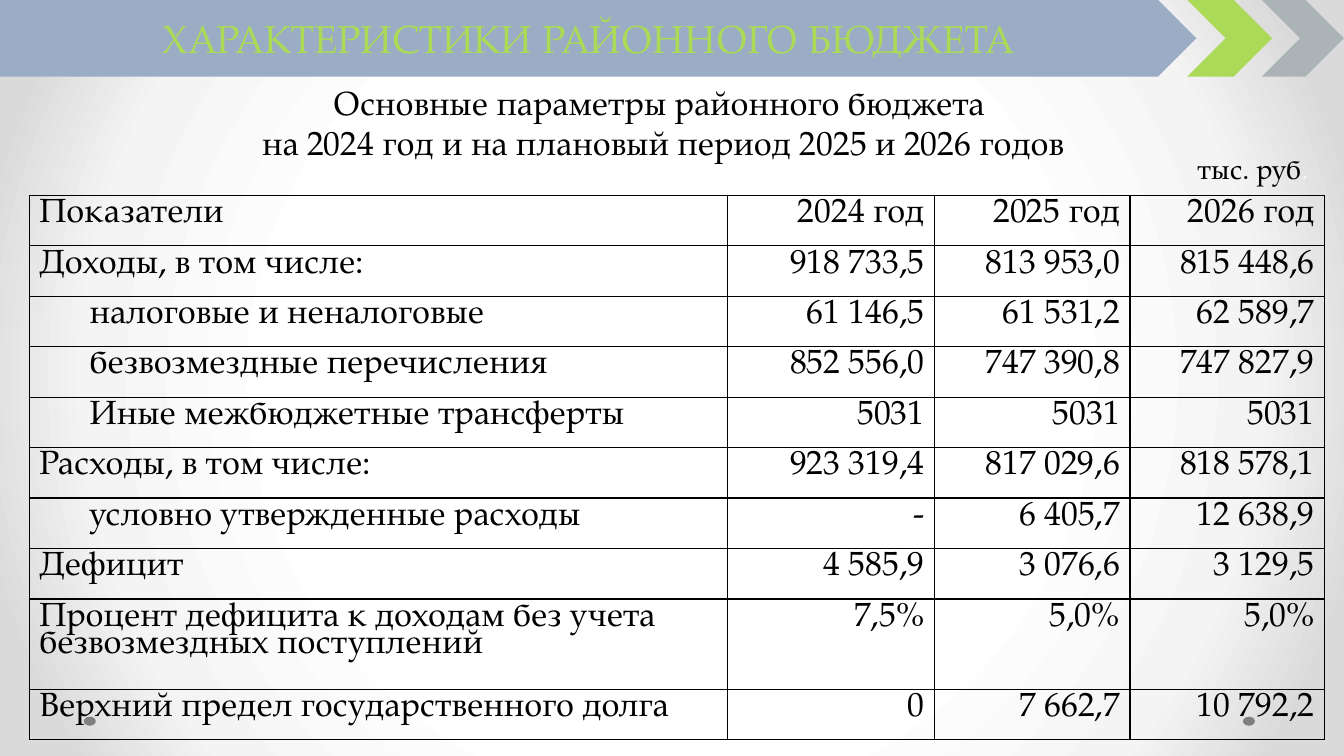
from dataclasses import dataclass

from lxml import etree
from pptx import Presentation
from pptx.dml.color import RGBColor
from pptx.enum import shapes, text
from pptx.oxml import parse_xml
from pptx.oxml.ns import qn
from pptx.util import Pt

TITLE = "ХАРАКТЕРИСТИКИ РАЙОННОГО БЮДЖЕТА"
HEADING = ["Основные параметры районного бюджета ",
           "на 2024 год и на плановый период 2025 и 2026 годов"]
UNITS = "тыс. руб"
BUDGET = [
    (0, "Показатели", "2024 год", "2025 год", "2026 год"),
    (0, "Доходы, в том числе:", "918 733,5", "813 953,0", "815 448,6"),
    (1, "налоговые и неналоговые", "61 146,5", "61 531,2", "62 589,7"),
    (1, "безвозмездные перечисления", "852 556,0", "747 390,8", "747 827,9"),
    (1, "Иные межбюджетные трансферты", "5031", "5031", "5031"),
    (0, "Расходы, в том числе:", "923 319,4", "817 029,6", "818 578,1"),
    (1, "условно утвержденные расходы", "-", "6 405,7", "12 638,9"),
    (0, "Дефицит", "4 585,9", "3 076,6", "3 129,5"),
    (0, "Процент дефицита к доходам без учета безвозмездных поступлений",
     "7,5%", "5,0%", "5,0%"),
    (0, "Верхний предел государственного долга", "0", "7 662,7", "10 792,2"),
]


@dataclass(frozen=True)
class Theme:
    font: str = "TeX Gyre Pagella"
    ink: str = "000000"
    banner: str = "9BADC4"
    lime: str = "ABD958"
    silver: str = "ACB3B6"
    dot: str = "808080"
    pale: str = "FAFBFC"
    glow: tuple = ((50, "FFFFFF"), (76, "F4F4F4"), (92, "DADADA"))
    title: int = 28
    body: int = 24
    units: int = 20


theme = Theme()
DRAWING = "http://schemas.openxmlformats.org/drawingml/2006/main"
COLUMN_WIDTHS = [499, 147.6, 139.7, 139]
ROW_HEIGHT, TALL_ROW_HEIGHT = 36.05, 64.6
TALL_ROW = 8
BANNER_HEIGHT = 54.7

deck = Presentation()
deck.slide_width, deck.slide_height = Pt(960), Pt(540)
slide = deck.slides.add_slide(deck.slide_layouts[6])


def paint_background():
    fill = slide.background.fill
    fill.gradient()
    stops = "".join(f'<a:gs pos="{pos * 1000}"><a:srgbClr val="{color}"/></a:gs>'
                    for pos, color in theme.glow)
    glow = parse_xml(
        f'<a:gradFill xmlns:a="{DRAWING}" rotWithShape="1"><a:gsLst>{stops}</a:gsLst>'
        '<a:path path="circle"><a:fillToRect l="50000" t="50000" r="50000" b="50000"/>'
        '</a:path></a:gradFill>')
    plain = slide.background._cSld.find(".//" + qn("a:gradFill"))
    plain.getparent().replace(plain, glow)


def add_run(paragraph, words, size, color=theme.ink):
    run = paragraph.add_run()
    run.text = words
    run.font.name, run.font.size = theme.font, Pt(size)
    run.font.color.rgb = RGBColor.from_string(color)


def add_figure(kind, left, top, width, height, color):
    figure = slide.shapes.add_shape(kind, Pt(left), Pt(top), Pt(width), Pt(height))
    figure.shadow.inherit = False
    figure.fill.solid()
    figure.fill.fore_color.rgb = RGBColor.from_string(color)
    figure.line.fill.background()
    return figure


def add_label(left, top, width, height, wrap):
    frame = slide.shapes.add_textbox(Pt(left), Pt(top), Pt(width), Pt(height)).text_frame
    frame.word_wrap = wrap
    return frame


def add_borders(cell):
    properties = cell._tc.get_or_add_tcPr()
    for position, side in enumerate(("lnL", "lnR", "lnT", "lnB")):
        border = etree.Element(qn("a:" + side), w=str(Pt(1)))
        solid = etree.SubElement(border, qn("a:solidFill"))
        etree.SubElement(solid, qn("a:srgbClr"), val=theme.ink)
        properties.insert(position, border)


def add_budget_table():
    heights = [TALL_ROW_HEIGHT if row == TALL_ROW else ROW_HEIGHT
               for row in range(len(BUDGET))]
    table = slide.shapes.add_table(
        len(BUDGET), len(COLUMN_WIDTHS), Pt(20.9), Pt(139.6),
        Pt(sum(COLUMN_WIDTHS)), Pt(sum(heights))).table
    table.first_row = table.horz_banding = False
    for column, width in zip(table.columns, COLUMN_WIDTHS):
        column.width = Pt(width)
    for row, height, (level, *entries) in zip(table.rows, heights, BUDGET):
        row.height = Pt(height)
        for position, (cell, entry) in enumerate(zip(row.cells, entries)):
            cell.fill.background()
            add_borders(cell)
            paragraph = cell.text_frame.paragraphs[0]
            paragraph.line_spacing = 0.82
            if position:
                paragraph.alignment = text.PP_ALIGN.RIGHT
            elif level:
                paragraph.level = level
                indent = paragraph._p.get_or_add_pPr()
                indent.set("marL", str(Pt(36)))
                indent.set("indent", "0")
            add_run(paragraph, entry, theme.body)


paint_background()

for dot_left in (887.8, 59.8):
    add_figure(shapes.MSO_SHAPE.OVAL, dot_left, 511.9, 8.6, 6.5, theme.dot)

heading = add_label(174.2, 54.7, 599, 65.5, False)
for position, line in enumerate(HEADING):
    paragraph = heading.add_paragraph() if position else heading.paragraphs[0]
    paragraph.alignment = text.PP_ALIGN.CENTER
    add_run(paragraph, line, theme.body)

add_budget_table()

units = add_label(848.2, 104.4, 126.7, 31.7, True).paragraphs[0]
add_run(units, UNITS, theme.units)
add_run(units, ".", theme.units, theme.pale)

banner = add_figure(shapes.MSO_SHAPE.PENTAGON, 0, 0, 854.6, BANNER_HEIGHT, theme.banner)
banner.text_frame.vertical_anchor = text.MSO_ANCHOR.MIDDLE
title = banner.text_frame.paragraphs[0]
title.alignment = text.PP_ALIGN.CENTER
add_run(title, TITLE, theme.title)
title.runs[0].font.color.rgb = RGBColor.from_string(theme.lime)

for left, width, color in ((848.2, 60.5, theme.lime), (901.4, 58.6, theme.silver)):
    add_figure(shapes.MSO_SHAPE.CHEVRON, left, 0, width, BANNER_HEIGHT, color)

deck.save("out.pptx")
